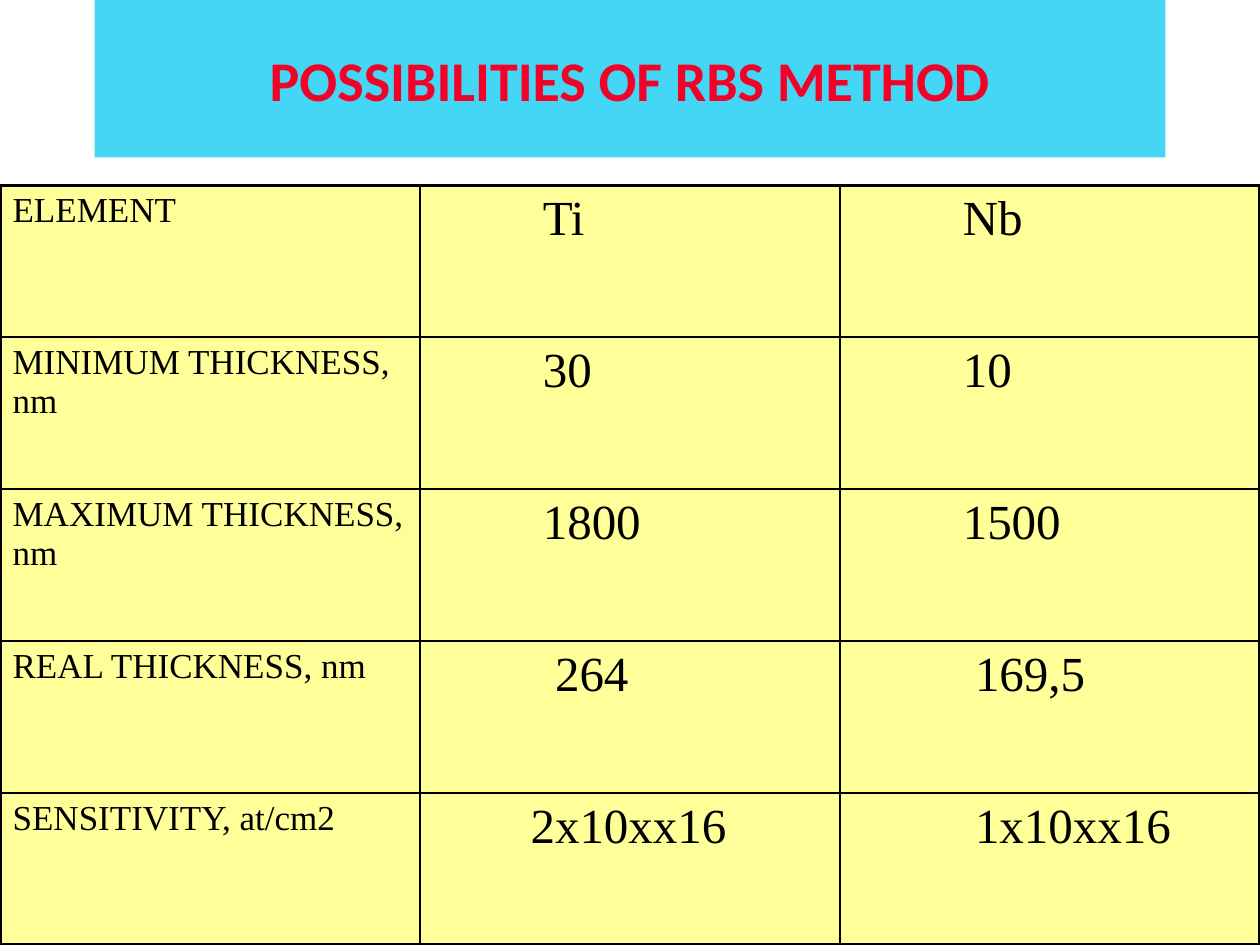
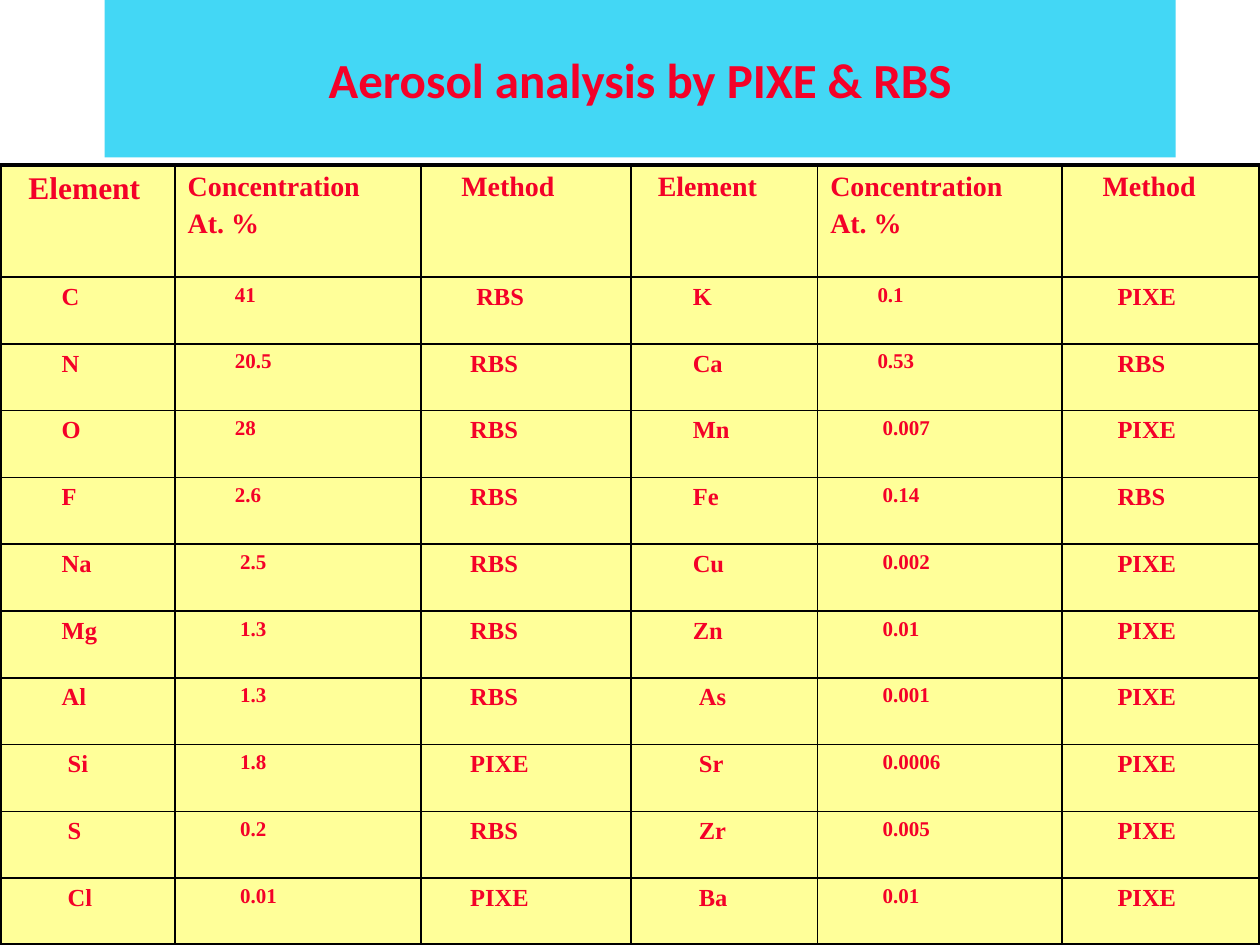
from dataclasses import dataclass

from lxml import etree
from pptx import Presentation
from pptx.dml.color import RGBColor
from pptx.enum.text import MSO_ANCHOR, PP_ALIGN
from pptx.oxml.ns import qn
from pptx.util import Inches, Pt

CENTER = PP_ALIGN.CENTER
MIDDLE = MSO_ANCHOR.MIDDLE
TITLE_ONLY = 5


@dataclass(frozen=True)
class Theme:
    band: str = "43D7F5"
    accent: str = "F40128"
    cell: str = "FFFF99"
    ink: str = "000000"
    title_font: str = "Calibri"
    table_font: str = "Times New Roman"
    label_size: int = 20
    value_size: int = 28
    first_header_size: int = 18
    header_size: int = 16
    symbol_size: int = 14
    number_size: int = 12
    outer_line: float = 2.25
    inner_line: float = 1


@dataclass(frozen=True)
class Column:
    """Texts, type sizes and indents (in space widths) from top to bottom."""
    width: float
    texts: list
    sizes: list
    indents: list


THEME = Theme()


def rgb(value):
    return RGBColor.from_string(value)


def add_title(page, text, left, size):
    title = page.shapes.title
    title.left, title.top = Inches(left), Inches(0)
    title.width, title.height = Inches(8.5), Inches(1.25)
    title.fill.solid()
    title.fill.fore_color.rgb = rgb(THEME.band)
    frame = title.text_frame
    frame.text = text
    frame.vertical_anchor = MIDDLE
    para = frame.paragraphs[0]
    para.alignment = CENTER
    style_font(para.font, THEME.title_font, size, THEME.accent, True)


def style_font(font, name, size, color, bold):
    font.name, font.size, font.bold = name, Pt(size), bold
    font.color.rgb = rgb(color)


def set_border(cell, side, width):
    line = etree.SubElement(cell._tc.get_or_add_tcPr(), qn(f"a:ln{side}"), w=str(Pt(width)))
    fill = etree.SubElement(line, qn("a:solidFill"))
    etree.SubElement(fill, qn("a:srgbClr"), val=THEME.ink)


def fill_cell(cell, text, size, indent, color, bold):
    cell.text_frame.text = text
    for number, para in enumerate(cell.text_frame.paragraphs):
        style_font(para.font, THEME.table_font, size, color, bold)
        # A space is a quarter of the type size wide
        para._p.get_or_add_pPr().set("marL", str(Pt(indent * size / 4)))
        if number:
            para.space_before = Pt(size * 0.2)
    cell.fill.solid()
    cell.fill.fore_color.rgb = rgb(THEME.cell)


def add_grid(page, top, columns, heights, color, bold):
    total_width = sum(column.width for column in columns)
    grid = page.shapes.add_table(len(heights), len(columns), Inches(0), Inches(top),
                                 Inches(total_width), Inches(sum(heights))).table
    grid.horz_banding = grid.first_row = False
    for row, height in zip(grid.rows, heights):
        row.height = Inches(height)

    last_row, last_column = len(heights) - 1, len(columns) - 1
    for x, column in enumerate(columns):
        grid.columns[x].width = Inches(column.width)
        for y, (text, size, indent) in enumerate(
                zip(column.texts, column.sizes, column.indents)):
            cell = grid.cell(y, x)
            # Heavy lines around the grid, thin ones inside
            edges = {"L": x == 0, "R": x == last_column, "T": y == 0, "B": y == last_row}
            for side, is_outer in edges.items():
                set_border(cell, side, THEME.outer_line if is_outer else THEME.inner_line)
            fill_cell(cell, text, size, indent, color, bold)


def build_possibilities(page):
    add_title(page, "POSSIBILITIES OF RBS METHOD", 0.75, 32)
    width, count = 10 / 3, 5
    labels = ["ELEMENT", "MINIMUM THICKNESS, nm", "MAXIMUM THICKNESS, nm",
              "REAL THICKNESS, nm", "SENSITIVITY, at/cm2"]
    titanium = ["Ti", "30", "1800", "264", "2x10xx16"]
    niobium = ["Nb", "10", "1500", "169,5", "1x10xx16"]
    value_sizes = [THEME.value_size] * count
    columns = [
        Column(width, labels, [THEME.label_size] * count, [0] * count),
        Column(width, titanium, value_sizes, [9, 9, 9, 10, 8]),
        Column(width, niobium, value_sizes, [9, 9, 9, 10, 10]),
    ]
    add_grid(page, 1.47, columns, [6.03 / count] * count, THEME.ink, False)


def build_aerosol(page):
    add_title(page, "Aerosol analysis by PIXE & RBS", 0.83, 28)
    count = 10
    symbol_sizes = [THEME.header_size] + [THEME.symbol_size] * count
    first_sizes = [THEME.first_header_size] + symbol_sizes[1:]
    number_sizes = [THEME.header_size] + [THEME.number_size] * count
    concentration = "Concentration\nAt. %"
    columns = [
        Column(1.39, ["Element", "C", "N", "O", "F", "Na", "Mg", "Al", "Si", "S", "Cl"],
               first_sizes, [2] + [8] * 7 + [9] * 3),
        Column(1.95, [concentration, "41", "20.5", "28", "2.6", "2.5", "1.3", "1.3",
                      "1.8", "0.2", "0.01"],
               number_sizes, [0] + [9] * 4 + [10] * 6),
        Column(1.67, ["Method"] + ["RBS"] * 7 + ["PIXE", "RBS", "PIXE"],
               symbol_sizes, [4, 7] + [6] * 9),
        Column(1.48, ["Element", "K", "Ca", "Mn", "Fe", "Cu", "Zn", "As", "Sr", "Zr", "Ba"],
               symbol_sizes, [2] + [8] * 6 + [9] * 4),
        Column(1.94, [concentration, "0.1", "0.53", "0.007", "0.14", "0.002", "0.01",
                      "0.001", "0.0006", "0.005", "0.01"],
               number_sizes, [0] + [9] * 2 + [10] * 8),
        Column(1.57, ["Method", "PIXE", "RBS", "PIXE", "RBS"] + ["PIXE"] * 6,
               symbol_sizes, [4] + [7] * count),
    ]
    add_grid(page, 1.31, columns, [0.89] + [0.53] * count, THEME.accent, True)


def main():
    deck = Presentation()
    deck.slide_width, deck.slide_height = Inches(10), Inches(7.5)
    for build in (build_possibilities, build_aerosol):
        build(deck.slides.add_slide(deck.slide_layouts[TITLE_ONLY]))
    deck.save("out.pptx")


if __name__ == "__main__":
    main()
